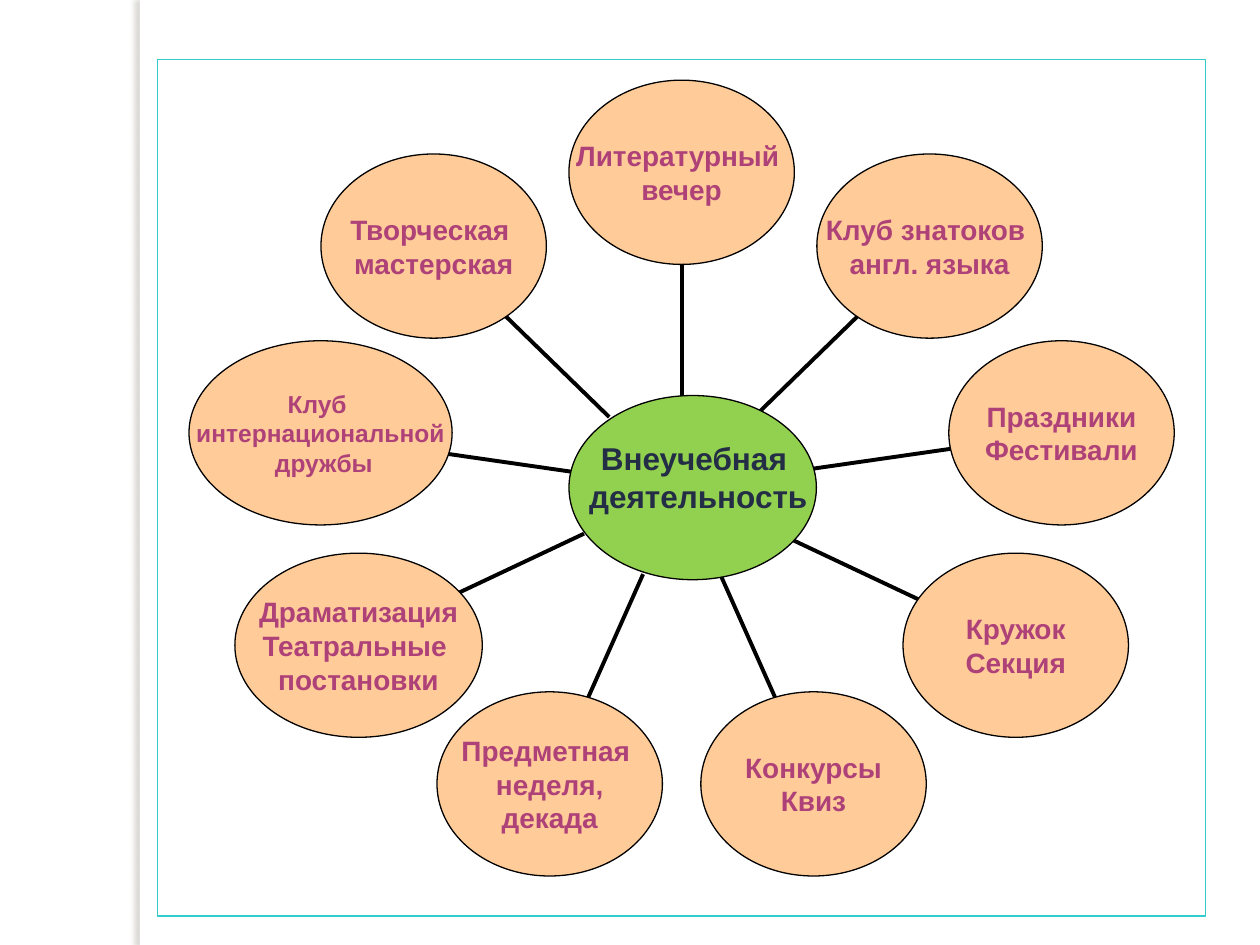
import math
from collections import namedtuple

import pptx
import pptx.dml.color
import pptx.enum.shapes
import pptx.enum.text
import pptx.oxml
import pptx.oxml.ns
import pptx.util

SLIDE_W, SLIDE_H = 10, 7.5
COLORS = {
    "white": "FFFFFF",
    "black": "000000",
    "frame": "33CCCC",
    "hub": "92D050",
    "hub_text": "242D46",
    "activity": "FFCC99",
    "activity_text": "AE4278",
    "bar_shadow": "736F63",
}
SHAPES = pptx.enum.shapes.MSO_SHAPE
Box = namedtuple("Box", "left top width height")

# Shares of the frame's width and height
OVAL_SHARE = 0.215
ORBIT_SHARE = 0.368
HUB_WIDTH_SHARE = 0.236

# Counter-clockwise from the upper left: lines, width share, text size
ACTIVITIES = [
    (["Творческая ", "мастерская"], OVAL_SHARE, 16),
    (["Клуб ", "интернациональной", " дружбы"], 0.251, 14),
    (["Драматизация", "Театральные ", "постановки"], HUB_WIDTH_SHARE, 16),
    (["Предметная ", "неделя,", "декада"], OVAL_SHARE, 16),
    (["Конкурсы", "Квиз"], OVAL_SHARE, 16),
    (["Кружок", "Секция"], OVAL_SHARE, 16),
    (["Праздники", "Фестивали"], OVAL_SHARE, 16),
    (["Клуб знатоков ", "англ. языка"], OVAL_SHARE, 16),
    (["Литературный ", "вечер"], OVAL_SHARE, 16),
]


def rgb(name):
    return pptx.dml.color.RGBColor.from_string(COLORS[name])


def inches(values):
    return [pptx.util.Inches(value) for value in values]


def add_figure(slide, preset, box, fill=None, line=None):
    figure = slide.shapes.add_shape(preset, *inches(box))
    figure.shadow.inherit = False
    if fill:
        figure.fill.solid()
        figure.fill.fore_color.rgb = rgb(fill)
    else:
        figure.fill.background()
    if line:
        figure.line.color.rgb = rgb(line)
        figure.line.width = pptx.util.Pt(0.75)
    else:
        figure.line.fill.background()
    return figure


def write_text(frame, lines, size, color, font="Arial", bold=True):
    frame.word_wrap = False
    for index, line in enumerate(lines):
        paragraph = frame.add_paragraph() if index else frame.paragraphs[0]
        paragraph.alignment = pptx.enum.text.PP_ALIGN.CENTER
        run = paragraph.add_run()
        run.text = line
        run.font.name = font
        run.font.size = pptx.util.Pt(size)
        run.font.bold = bold
        run.font.color.rgb = rgb(color)


def add_spoke(slide, start, end):
    spoke = slide.shapes.add_connector(
        pptx.enum.shapes.MSO_CONNECTOR.STRAIGHT, *inches(start + end))
    spoke.line.color.rgb = rgb("black")
    spoke.line.width = pptx.util.Pt(2.25)
    spoke._element.spPr.append(pptx.oxml.parse_xml(
        f'<a:effectLst {pptx.oxml.ns.nsdecls("a")}/>'))


def add_side_bar(slide, box):
    bar = add_figure(slide, SHAPES.RECTANGLE, box, fill="white")
    effects = bar._element.spPr.find(pptx.oxml.ns.qn("a:effectLst"))
    effects.append(pptx.oxml.parse_xml(
        f'<a:outerShdw {pptx.oxml.ns.nsdecls("a")} blurRad="38100" dist="38100"'
        ' dir="10800000" algn="tl" rotWithShape="0">'
        f'<a:srgbClr val="{COLORS["bar_shadow"]}"><a:alpha val="25000"/></a:srgbClr>'
        '</a:outerShdw>'))


def add_activity(slide, box, lines, size):
    oval = add_figure(slide, SHAPES.OVAL, box, "activity", "black")
    frame = oval.text_frame
    frame.margin_left = frame.margin_right = 0
    frame.margin_top = frame.margin_bottom = 0
    frame.vertical_anchor = pptx.enum.text.MSO_ANCHOR.MIDDLE
    write_text(frame, lines, size, "activity_text")


def add_hub(slide, box):
    add_figure(slide, SHAPES.OVAL, box, "hub", "black")
    title_box = Box(box.left - 0.01 * box.width, box.top + 0.205 * box.height,
                    1.03 * box.width, 0.486 * box.height)
    title = slide.shapes.add_textbox(*inches(title_box))
    write_text(title.text_frame, [" Внеучебная ", " деятельность"], 18, "hub_text")
    title.text_frame.auto_size = pptx.enum.text.MSO_AUTO_SIZE.SHAPE_TO_FIT_TEXT


def add_activity_wheel(slide, box):
    add_figure(slide, SHAPES.RECTANGLE, box, line="frame")
    center_x = box.left + box.width / 2
    center_y = box.top + box.height / 2
    oval_w, oval_h = OVAL_SHARE * box.width, OVAL_SHARE * box.height

    def on_ring(share, angle):
        return (center_x + share * box.width * math.sin(angle),
                center_y - share * box.height * math.cos(angle))

    # Each spoke fills the gap between the hub's rim and an activity's rim
    step = 2 * math.pi / len(ACTIVITIES)
    for number, (lines, width_share, size) in enumerate(ACTIVITIES, start=1):
        angle = -number * step
        add_spoke(slide, on_ring(OVAL_SHARE / 2, angle),
                  on_ring(ORBIT_SHARE - OVAL_SHARE / 2, angle))
        x, y = on_ring(ORBIT_SHARE, angle)
        # Wider ovals keep their left edge and grow to the right
        oval = Box(x - oval_w / 2, y - oval_h / 2, width_share * box.width, oval_h)
        add_activity(slide, oval, lines, size)

    add_hub(slide, Box(center_x - oval_w / 2, center_y - oval_h / 2,
                       HUB_WIDTH_SHARE * box.width, oval_h))


def main():
    deck = pptx.Presentation()
    deck.slide_width, deck.slide_height = inches((SLIDE_W, SLIDE_H))
    slide = deck.slides.add_slide(deck.slide_layouts[6])
    slide.background.fill.solid()
    slide.background.fill.fore_color.rgb = rgb("white")

    add_side_bar(slide, Box(1.11, 0, 0.08, SLIDE_H))
    add_activity_wheel(slide, Box(1.25, 0.47, 8.32, 6.8))
    deck.save("out.pptx")


if __name__ == "__main__":
    main()
